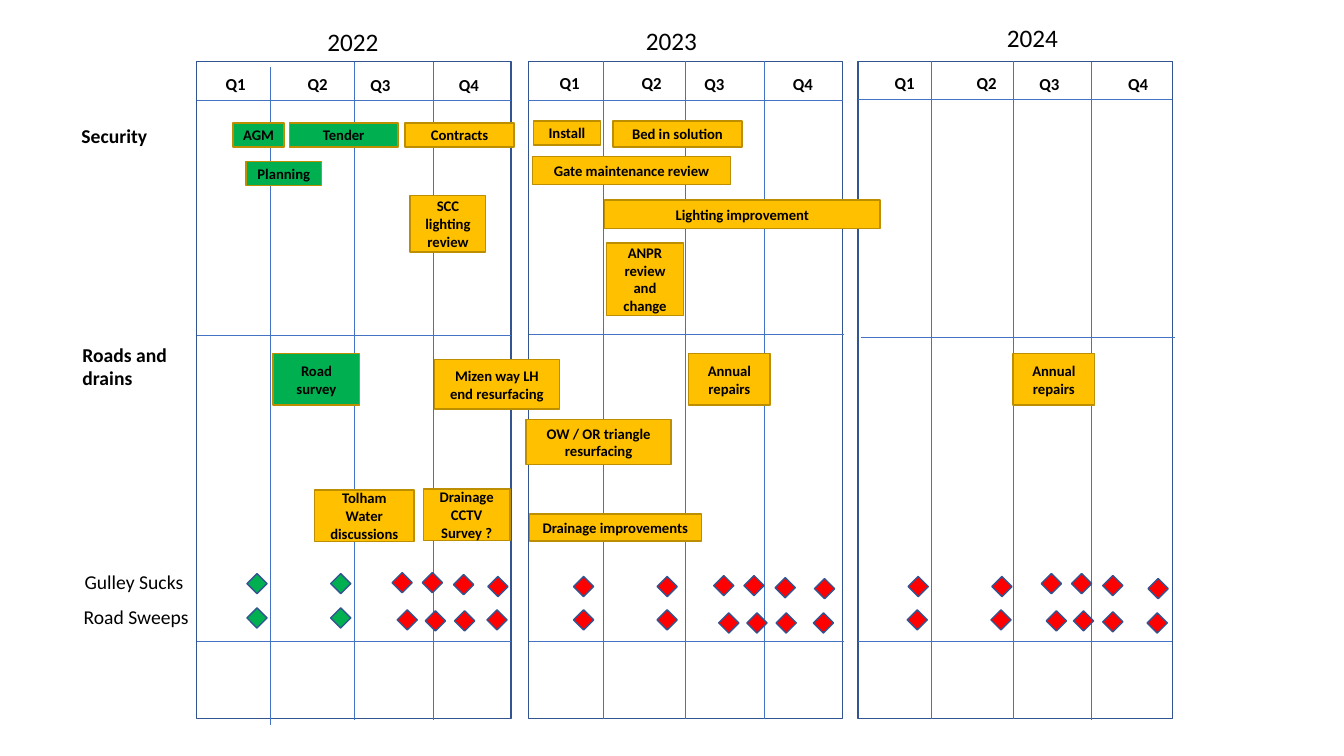
from lxml import etree
from pptx import Presentation
from pptx.dml.color import RGBColor
from pptx.enum.shapes import MSO_CONNECTOR, MSO_SHAPE
from pptx.enum.text import MSO_ANCHOR as ANCHOR, PP_ALIGN as ALIGN
from pptx.oxml.ns import qn
from pptx.util import Pt

NAVY, BLUE, BROWN = "325491", "4472C4", "BD8E00"
GREEN, AMBER, RED = "00B050", "FFC000", "FF0000"
rgb = RGBColor.from_string

prs = Presentation()
prs.slide_width, prs.slide_height = Pt(960), Pt(540)
s = prs.slides.add_slide(prs.slide_layouts[6])


def add_box(kind, x, y, w, h, fill=None, line=NAVY):
    sp = s.shapes.add_shape(kind, Pt(x), Pt(y), Pt(w), Pt(h))
    sp.shadow.inherit = False
    if fill:
        sp.fill.solid()
        sp.fill.fore_color.rgb = rgb(fill)
    else:
        sp.fill.background()
    sp.line.color.rgb = rgb(line)
    sp.line.width = Pt(1)
    return sp


def add_text(text, x, y, w, h, size=12, bold=False, wrap=False, sp=None,
             align=ALIGN.LEFT, anchor=ANCHOR.TOP):
    sp = sp or s.shapes.add_textbox(Pt(x), Pt(y), Pt(w), Pt(h))
    tf = sp.text_frame
    tf.word_wrap = wrap
    tf.vertical_anchor = anchor
    p = tf.paragraphs[0]
    p.alignment = align
    r = p.add_run()
    r.text = text
    r.font.name, r.font.size, r.font.bold = "Calibri", Pt(size), bold
    r.font.color.rgb = rgb("000000")


# Year panels: label, panel left, label left and top, first quarter left and top
PANEL_TOP, PANEL_W, PANEL_H = 43.9, 224.6, 469.4
years = [
    ("2022", 140.4, 226.8, 15.1, 154.1, 49),
    ("2023", 377.3, 454.3, 14.4, 392.6, 48.2),
    ("2024", 612.9, 712.1, 12.2, 632, 48.2),
]
quarters = [("Q1", 0, 0), ("Q2", 58.6, 0), ("Q3", 103.4, 1), ("Q4", 166.7, 1)]
for year, left, label_x, label_y, q_x, q_y in years:
    add_box(MSO_SHAPE.RECTANGLE, left, PANEL_TOP, PANEL_W, PANEL_H)
    add_text(year, label_x, label_y, 51.1, 28.8, size=18)
    for quarter, dx, dy in quarters:
        add_text(quarter, q_x + dx, q_y + dy, 28.8, 21.6, bold=True)

# Grid lines: quarter dividers, then header, middle and bottom rules
dividers = [(193, 48.2), (253.4, 44.6), (309.6, 44.6),
            (431.3, 43.9), (489.6, 43.9), (545.8, 43.9),
            (665.3, 43.9), (723.6, 43.9), (779.8, 44.6)]
rules = [(140.4, 72), (377.3, 72), (612.9, 71.3),
         (140.4, 239.8), (378, 239), (614.9, 241.2),
         (140.4, 457.9), (378, 457.9), (612.9, 457.9)]
grid = [(x, y, x, y + PANEL_H) for x, y in dividers]
grid += [(x, y, x + PANEL_W, y) for x, y in rules]
for ends in grid:
    line = s.shapes.add_connector(MSO_CONNECTOR.STRAIGHT, *map(Pt, ends))
    line.line.color.rgb = rgb(BLUE)
    line.line.width = Pt(0.5)
    etree.SubElement(line._element.spPr, qn("a:effectLst"))

# Row labels
add_text("Security", 51.1, 85, 61.9, 24.5, size=14, bold=True)
add_text("Roads and drains", 51.8, 241.2, 106.6, 41, size=14, bold=True, wrap=True)
add_text("Gulley Sucks", 53.3, 403.9, 85.7, 24.5, size=14)
add_text("Road Sweeps", 52.6, 428.4, 90, 24.5, size=14)

# Activity bars: text, left, top, width, height, fill
activities = [
    ("AGM", 166.3, 87.8, 36.7, 17.3, GREEN),
    ("Tender", 206.6, 87.8, 77.8, 17.3, GREEN),
    ("Contracts", 289.4, 87.8, 77.8, 17.3, AMBER),
    ("Install", 380.9, 86.4, 48.2, 17.3, AMBER),
    ("Bed in solution", 437.8, 86.4, 92.2, 18.7, AMBER),
    ("Planning", 175.7, 115.2, 54, 17.3, GREEN),
    ("Gate maintenance review", 380.2, 111.6, 141.8, 20.2, AMBER),
    ("SCC lighting review", 293, 139.7, 54, 40.3, AMBER),
    ("Lighting improvement", 432, 142.9, 196.6, 20.2, AMBER),
    ("ANPR review and change", 433.4, 173.5, 54.7, 51.8, AMBER),
    ("Road survey", 195.1, 252.7, 61.9, 36.7, GREEN),
    ("Mizen way LH end resurfacing", 310.3, 257, 89.3, 35.3, AMBER),
    ("Annual repairs", 491.8, 252.7, 58.3, 36.7, AMBER),
    ("Annual repairs", 723.6, 252.7, 58.3, 36.7, AMBER),
    ("OW / OR triangle resurfacing", 375.8, 299.5, 103.7, 32.4, AMBER),
    ("Tolham Water discussions", 224.6, 349.9, 71.3, 36.7, AMBER),
    ("Drainage CCTV Survey ?", 302.4, 349.2, 61.9, 36.7, AMBER),
    ("Drainage improvements", 378, 367.2, 123.1, 19.4, AMBER),
]
for text, x, y, w, h, fill in activities:
    bar = add_box(MSO_SHAPE.RECTANGLE, x, y, w, h, fill, BROWN)
    add_text(text, x, y, w, h, size=10.5, bold=True, wrap=True, sp=bar,
             align=ALIGN.CENTER, anchor=ANCHOR.MIDDLE)

# Milestone diamonds: the first two of each row are done
gulley_sucks = [
    (176.4, 409.7), (236.2, 409.7), (280.1, 409), (301.7, 409), (324, 410.4), (348.5, 411.8),
    (409.7, 411.8), (469.4, 411.8), (509.8, 411.1), (531.4, 411.1), (553.7, 412.6), (581.8, 413.3),
    (648.7, 411.8), (708.5, 411.8), (743.8, 409.7), (765.4, 409.7), (787.7, 411.1), (820.1, 413.3),
]
road_sweeps = [
    (176.4, 434.2), (236.2, 434.2), (283.7, 435.6), (303.8, 436.3), (324.7, 436.3), (347.8, 435.6),
    (409.7, 435.6), (469.4, 435.6), (513.4, 437.8), (533.5, 437.8), (554.4, 437.8), (581, 437.8),
    (648, 435.6), (707.8, 435.6), (747.4, 436.3), (766.8, 436.3), (787.7, 437), (819.4, 437.8),
]
for row in (gulley_sucks, road_sweeps):
    for i, (x, y) in enumerate(row):
        add_box(MSO_SHAPE.DIAMOND, x, y, 14.4, 14.4, GREEN if i < 2 else RED)

prs.save("out.pptx")
